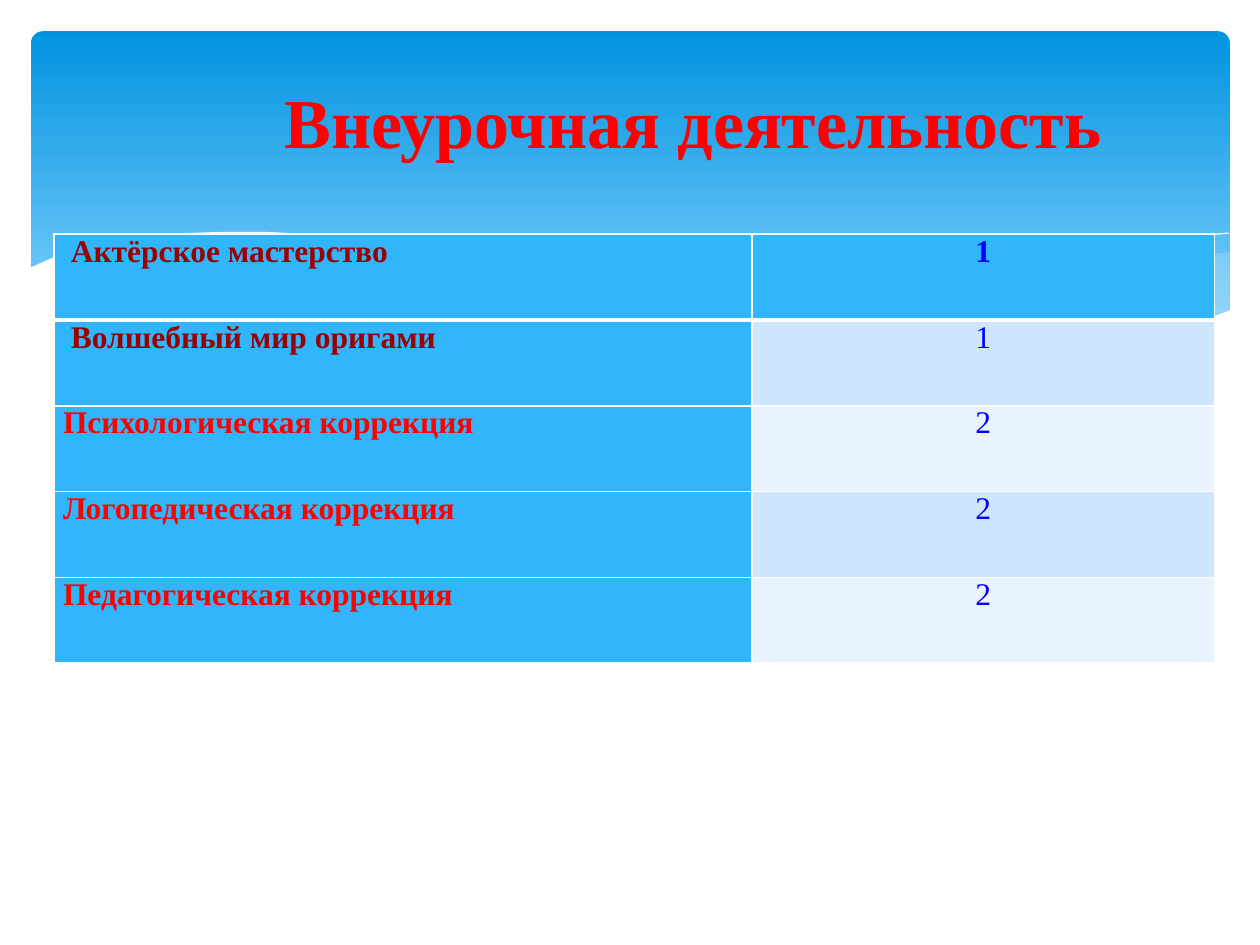
from dataclasses import dataclass
from pptx import Presentation
from pptx.dml.color import RGBColor as Rgb
from pptx.enum.shapes import MSO_SHAPE as Kind
from pptx.enum.text import MSO_ANCHOR as Anchor, PP_ALIGN as Align
from pptx.oxml.ns import qn
from pptx.util import Cm, Length, Pt
from lxml.etree import SubElement as Sub

HUES = {
    "top": "0293E0", "low": "83D3FE", "mist": "C6E7FC", "white": "FFFFFF",
    "red": "FF0000", "wine": "990000", "blue": "0000FF",
    "sky": "31B6FD", "pale": "CEE5FE", "light": "E8F3FF",
}
FONT = "Times New Roman"


@dataclass
class Wave:
    dots: list[tuple[int, int]]
    hue: str = "white"
    alpha: int = 100
    solid: bool = True


@dataclass
class Entry:
    name: str
    hours: str
    hue: str


WAVES = [
    Wave([(975, 200), (948, 204), (921, 210), (891, 216), (861, 223), (805, 237),
          (753, 248), (706, 257), (661, 265), (691, 269), (719, 272), (745, 275),
          (769, 277), (803, 278), (835, 277), (863, 275), (889, 272), (913, 267),
          (935, 262), (949, 257), (976, 247), (976, 200)], "mist", 29),
    Wave([(893, 273), (866, 269), (837, 265), (807, 260), (775, 254), (741, 247),
          (706, 240), (668, 231), (629, 222), (598, 214), (569, 208), (541, 203),
          (514, 198), (489, 194), (442, 189), (399, 186), (361, 185), (328, 187),
          (286, 191), (323, 196), (362, 203), (404, 211), (449, 222), (491, 232),
          (530, 240), (566, 248), (601, 255), (634, 261), (665, 266), (695, 270),
          (736, 275), (773, 277), (807, 278), (838, 278), (867, 276)], "mist", 40),
    Wave([(309, 195), (328, 192), (353, 189), (387, 187), (433, 187), (469, 189),
          (510, 192), (556, 197), (608, 204), (665, 213), (727, 226), (795, 241),
          (869, 261), (907, 272)], solid=False),
    Wave([(613, 257), (653, 246), (695, 235), (748, 223), (806, 210), (866, 199),
          (895, 194), (924, 190), (951, 187), (975, 185)], solid=False),
    Wave([(977, 246), (950, 256), (920, 265), (887, 271), (850, 275), (809, 277),
          (761, 275), (708, 270), (648, 262), (603, 254), (555, 245), (503, 233),
          (447, 220), (391, 207), (340, 197), (292, 190), (250, 186), (211, 184),
          (177, 184), (146, 185), (119, 187), (95, 191), (76, 195), (59, 199),
          (46, 203), (36, 207), (23, 213), (23, 329), (977, 329)]),
]
ROWS = [
    Entry(" Актёрское мастерство", "1", "wine"),
    Entry(" Волшебный мир оригами", "1", "wine"),
    Entry("Психологическая коррекция", "2", "red"),
    Entry("Логопедическая коррекция", "2", "red"),
    Entry("Педагогическая коррекция", "2", "red"),
]


def tint(hue: str) -> Rgb:
    return Rgb.from_string(HUES[hue])


def style(para, size: int, hue: str, bold: bool) -> None:
    for run in para.runs:
        font = run.font
        font.name, font.size, font.bold = FONT, Pt(size), bold
        font.color.rgb = tint(hue)


def draw_panel(slide) -> None:
    panel = slide.shapes.add_shape(
        Kind.ROUNDED_RECTANGLE, Cm(0.63), Cm(0.63), Cm(24.16), Cm(6.86))
    panel.adjustments[0] = 0.034
    panel.shadow.inherit = False
    panel.line.fill.background()
    panel.fill.gradient()
    panel.fill.gradient_angle = 270
    for stop, hue, place in zip(panel.fill.gradient_stops, ("top", "low"), (0, 0.9)):
        stop.color.rgb = tint(hue)
        stop.position = place


def draw_wave(slide, wave: Wave) -> None:
    pen = slide.shapes.build_freeform(*wave.dots[0], scale=float(Cm(0.0254)))
    pen.add_line_segments(wave.dots[1:], close=wave.solid)
    shape = pen.convert_to_shape()
    shape.shadow.inherit = False
    if not wave.solid:
        shape.fill.background()
        shape.line.color.rgb = tint(wave.hue)
        shape.line.width = Pt(0)
        return
    shape.line.fill.background()
    shape.fill.solid()
    shape.fill.fore_color.rgb = tint(wave.hue)
    if wave.alpha < 100:
        paint = shape._element.spPr.find(".//" + qn("a:srgbClr"))
        Sub(paint, qn("a:alpha"), val=str(wave.alpha * 1000))


def draw_title(slide) -> None:
    frame = slide.shapes.add_textbox(Cm(3.81), Cm(0.83), Cm(20.32), Cm(3.18)).text_frame
    frame.word_wrap = True
    frame.vertical_anchor = Anchor.MIDDLE
    frame.text = "Внеурочная деятельность"
    para = frame.paragraphs[0]
    para.alignment = Align.CENTER
    style(para, 40, "red", True)


def edge(cell, side: str, width: Length) -> None:
    line = Sub(cell._tc.get_or_add_tcPr(), qn("a:ln" + side), w=str(int(width)))
    Sub(Sub(line, qn("a:solidFill")), qn("a:srgbClr"), val=HUES["white"])


def fill_cell(cell, text: str, hue: str, bold: bool, back: str, row: int) -> None:
    widths = {"L": 1, "R": 1, "T": 3 if row == 1 else 1, "B": 3 if row == 0 else 1}
    for side, width in widths.items():
        edge(cell, side, Pt(width))
    cell.fill.solid()
    cell.fill.fore_color.rgb = tint(back)
    cell.margin_left = cell.margin_right = Cm(0.18)
    cell.margin_top = cell.margin_bottom = Cm(0)
    cell.text_frame.text = text
    style(cell.text_frame.paragraphs[0], 18, hue, bold)


def draw_table(slide) -> None:
    table = slide.shapes.add_table(
        len(ROWS), 2, Cm(1.09), Cm(4.72), Cm(23.39), Cm(8.65)).table
    for col, width in zip(table.columns, (14.07, 9.32)):
        col.width = Cm(width)
    for row, entry in enumerate(ROWS):
        table.rows[row].height = Cm(1.73)
        back = "sky" if row == 0 else ("light", "pale")[row % 2]
        name, hours = table.cell(row, 0), table.cell(row, 1)
        fill_cell(name, entry.name, entry.hue, True, "sky", row)
        fill_cell(hours, entry.hours, "blue", row == 0, back, row)
        hours.text_frame.paragraphs[0].alignment = Align.CENTER


def main() -> None:
    deck = Presentation()
    deck.slide_width, deck.slide_height = Cm(25.4), Cm(19.05)
    slide = deck.slides.add_slide(deck.slide_layouts[6])
    draw_panel(slide)
    for wave in WAVES:
        draw_wave(slide, wave)
    draw_title(slide)
    draw_table(slide)
    deck.save("out.pptx")


if __name__ == "__main__":
    main()
